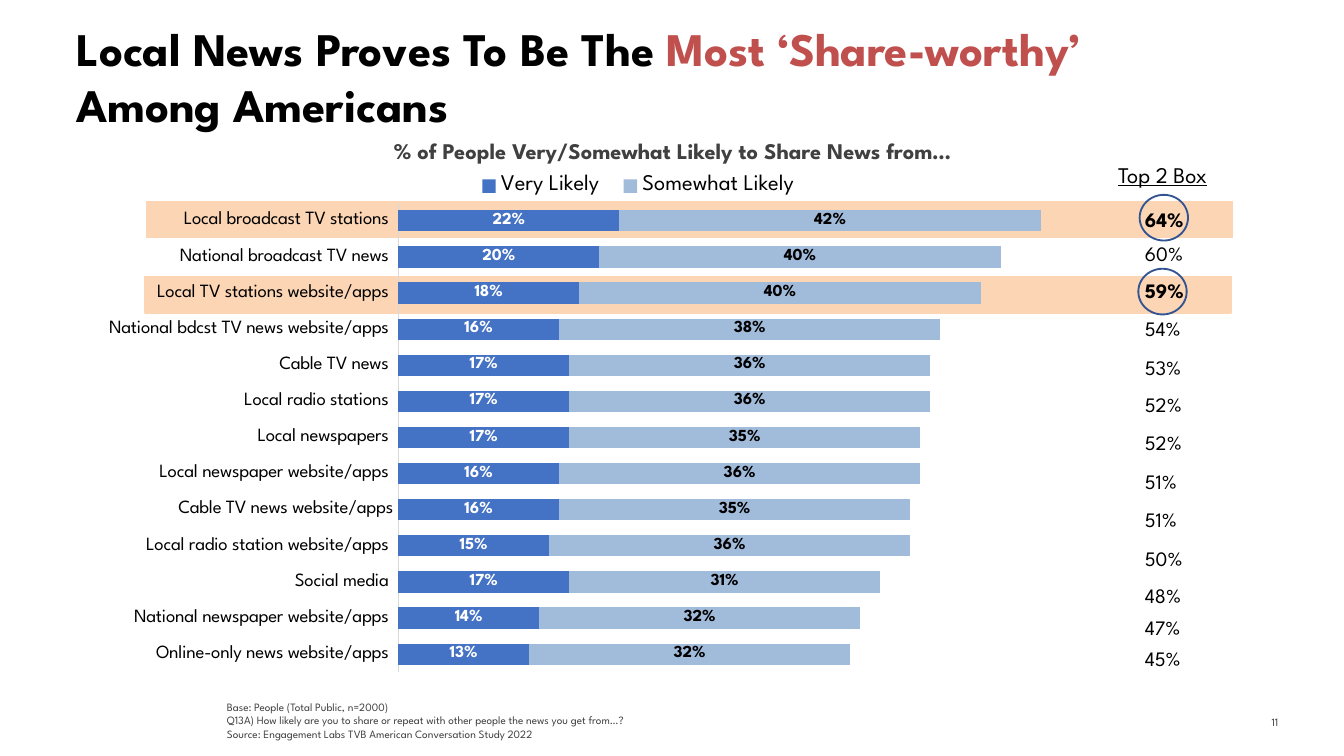
"""Build the slide on how likely Americans are to share news, by source."""
import pptx
import pptx.chart.data
import pptx.dml.color
import pptx.enum.chart
import pptx.enum.shapes
import pptx.enum.text
import pptx.oxml
import pptx.oxml.ns
import pptx.util

Inches, Pt = pptx.util.Inches, pptx.util.Pt
ALIGN, ANCHOR = pptx.enum.text.PP_ALIGN, pptx.enum.text.MSO_ANCHOR
FONT = "League Spartan"
COLORS = {"black": "000000", "white": "FFFFFF", "gray": "404040", "red": "C0504D",
          "band": "FCD5B5", "ring": "325491", "very": "4472C4", "somewhat": "A1BBDB",
          "axis": "D9D9D9", "number": "3C3C3A"}

TITLE = [("Local News Proves To Be The ", "black"), ("Most ‘Share-worthy’ ", "red"),
         ("Among Americans", "black")]
SUBTITLE = "% of People Very/Somewhat Likely to Share News from…"
FOOTNOTES = ["Base: People (Total Public, n=2000)",
             "Q13A) How likely are you to share or repeat with other people the news you get from…?",
             "Source: Engagement Labs TVB American Conversation Study 2022"]
SOURCES = [
    ("Local broadcast TV stations ", 0.22, 0.42, "64%", 1.49),
    ("National broadcast TV news ", 0.20, 0.40, "60%", 1.74),
    ("Local TV stations website/apps ", 0.18, 0.40, "59%", 2.02),
    ("National bdcst TV news website/apps ", 0.16, 0.38, "54%", 2.30),
    ("Cable TV news ", 0.17, 0.36, "53%", 2.59),
    ("Local radio stations ", 0.17, 0.36, "52%", 2.87),
    ("Local newspapers ", 0.17, 0.35, "52%", 3.15),
    ("Local newspaper website/apps ", 0.16, 0.36, "51%", 3.44),
    ("Cable TV news website/apps", 0.16, 0.35, "51%", 3.72),
    ("Local radio station website/apps ", 0.15, 0.36, "50%", 4.01),
    ("Social media ", 0.17, 0.31, "48%", 4.29),
    ("National newspaper website/apps ", 0.14, 0.32, "47%", 4.53),
    ("Online-only news website/apps ", 0.13, 0.32, "45%", 4.76),
]
SERIES = [("Very Likely", "very", "white"), ("Somewhat Likely", "somewhat", "black")]
HIGHLIGHTED = {0: ((1.09, 1.5), (8.48, 1.45)), 2: ((1.08, 2.06), (8.47, 2.0))}


def rgb(name):
    return pptx.dml.color.RGBColor.from_string(COLORS[name])


def style(font, size, color="black", bold=False, underline=False):
    font.name, font.size, font.bold, font.underline = FONT, Pt(size), bold, underline
    font.color.rgb = rgb(color)


def add_text(slide, paragraphs, box, size, color="black", bold=False, underline=False,
             align=ALIGN.LEFT, anchor=ANCHOR.TOP, wrap=True, top_inset=0.05):
    frame = slide.shapes.add_textbox(*map(Inches, box)).text_frame
    frame.word_wrap, frame.vertical_anchor = wrap, anchor
    frame.margin_top = Inches(top_inset)
    for index, content in enumerate(paragraphs):
        paragraph = frame.add_paragraph() if index else frame.paragraphs[0]
        paragraph.alignment = align
        runs = [(content, color)] if isinstance(content, str) else content
        for words, run_color in runs:
            run = paragraph.add_run()
            run.text = words
            style(run.font, size, run_color, bold, underline)


def add_mark(slide, preset, box, line, width, fill=None):
    mark = slide.shapes.add_shape(preset, *map(Inches, box))
    mark.shadow.inherit = False
    mark.line.color.rgb, mark.line.width = rgb(line), Pt(width)
    if fill:
        mark.fill.solid()
        mark.fill.fore_color.rgb = rgb(fill)
    else:
        mark.fill.background()


def chart_xml(tag, body):
    return pptx.oxml.parse_xml(f"<c:{tag} {pptx.oxml.ns.nsdecls('c', 'a')}>{body}</c:{tag}>")


def set_layout(part, index, inner=False, **fractions):
    for layout in part.findall(pptx.oxml.ns.qn("c:layout")):
        part.remove(layout)
    target = '<c:layoutTarget val="inner"/>' if inner else ""
    modes = '<c:xMode val="edge"/><c:yMode val="edge"/>'
    places = "".join(f'<c:{key} val="{value}"/>' for key, value in fractions.items())
    part.insert(index, chart_xml(
        "layout", f"<c:manualLayout>{target}{modes}{places}</c:manualLayout>"))


def add_share_chart(slide):
    data = pptx.chart.data.CategoryChartData(number_format="0%")
    data.categories = [source[0] for source in SOURCES]
    for column, (name, _, _) in enumerate(SERIES, start=1):
        data.add_series(name, [source[column] for source in SOURCES])
    chart = slide.shapes.add_chart(pptx.enum.chart.XL_CHART_TYPE.BAR_STACKED,
                                   *map(Inches, (0.64, 1.01, 8.3, 4.16)), data).chart
    style(chart.font, 10)
    chart.has_title = False
    chart.has_legend = True
    chart.legend.position = pptx.enum.chart.XL_LEGEND_POSITION.TOP
    chart.legend.include_in_layout = False
    style(chart.legend.font, 12)

    plot = chart.plots[0]
    plot.gap_width, plot.overlap, plot.vary_by_categories = 70, 100, False
    for series, (_, fill, label_color) in zip(plot.series, SERIES):
        series.format.fill.solid()
        series.format.fill.fore_color.rgb = rgb(fill)
        labels = series.data_labels
        labels.show_value = True
        labels.number_format, labels.number_format_is_linked = "0%", False
        style(labels.font, 9, label_color, bold=True)

    sources, shares = chart.category_axis, chart.value_axis
    sources.reverse_order = True
    sources.major_tick_mark = pptx.enum.chart.XL_TICK_MARK.NONE
    sources.format.line.color.rgb, sources.format.line.width = rgb("axis"), Pt(0.75)
    style(sources.tick_labels.font, 10)
    shares.minimum_scale, shares.maximum_scale = 0, 0.7
    shares.has_major_gridlines = False
    shares.tick_labels.number_format = "0%"
    shares.tick_labels.number_format_is_linked = False
    shares.visible = False

    space = chart.element
    area = space.find(".//" + pptx.oxml.ns.qn("c:plotArea"))
    set_layout(area, 0, inner=True, x=0.28, y=0.12, w=0.63, h=0.84)
    area.append(chart_xml("spPr", "<a:noFill/>"))
    legend = space.find(".//" + pptx.oxml.ns.qn("c:legend"))
    set_layout(legend, 1, x=0.34, y=0.05, w=0.31, h=0.08)
    space.find(pptx.oxml.ns.qn("c:chart")).addnext(
        chart_xml("spPr", "<a:noFill/><a:ln><a:noFill/></a:ln>"))


def main():
    deck = pptx.Presentation()
    deck.slide_width = Inches(10)
    deck.slide_height = deck.slide_width * 9 // 16
    slide = deck.slides.add_slide(deck.slide_layouts[6])
    shapes = pptx.enum.shapes.MSO_SHAPE

    add_text(slide, ["11 "], (9.04, 5.22, 0.59, 0.3), 6, "number",
             align=ALIGN.RIGHT, anchor=ANCHOR.MIDDLE)
    for band, _ in HIGHLIGHTED.values():
        add_mark(slide, shapes.RECTANGLE, (*band, 8.08, 0.27), "band", 0.75, fill="band")
    add_text(slide, FOOTNOTES, (1.59, 5.16, 8.11, 0.4), 6, "gray", anchor=ANCHOR.BOTTOM)
    add_text(slide, ["Top 2 Box"], (8.22, 1.15, 1.18, 0.43), 12, underline=True)
    for row, (_, _, _, total, top) in enumerate(SOURCES):
        add_text(slide, [total], (8.42, top, 0.5, 0.28), 11, bold=row in HIGHLIGHTED)
    add_text(slide, [TITLE], (0.47, 0.15, 8.8, 0.84), 25, bold=True, top_inset=0)
    add_text(slide, [SUBTITLE], (2.6, 0.97, 4.81, 0.3), 12, "gray", bold=True,
             align=ALIGN.CENTER, wrap=False)
    for _, ring in HIGHLIGHTED.values():
        add_mark(slide, shapes.OVAL, (*ring, 0.36, 0.34), "ring", 1)
    add_share_chart(slide)
    deck.save("out.pptx")


if __name__ == "__main__":
    main()
